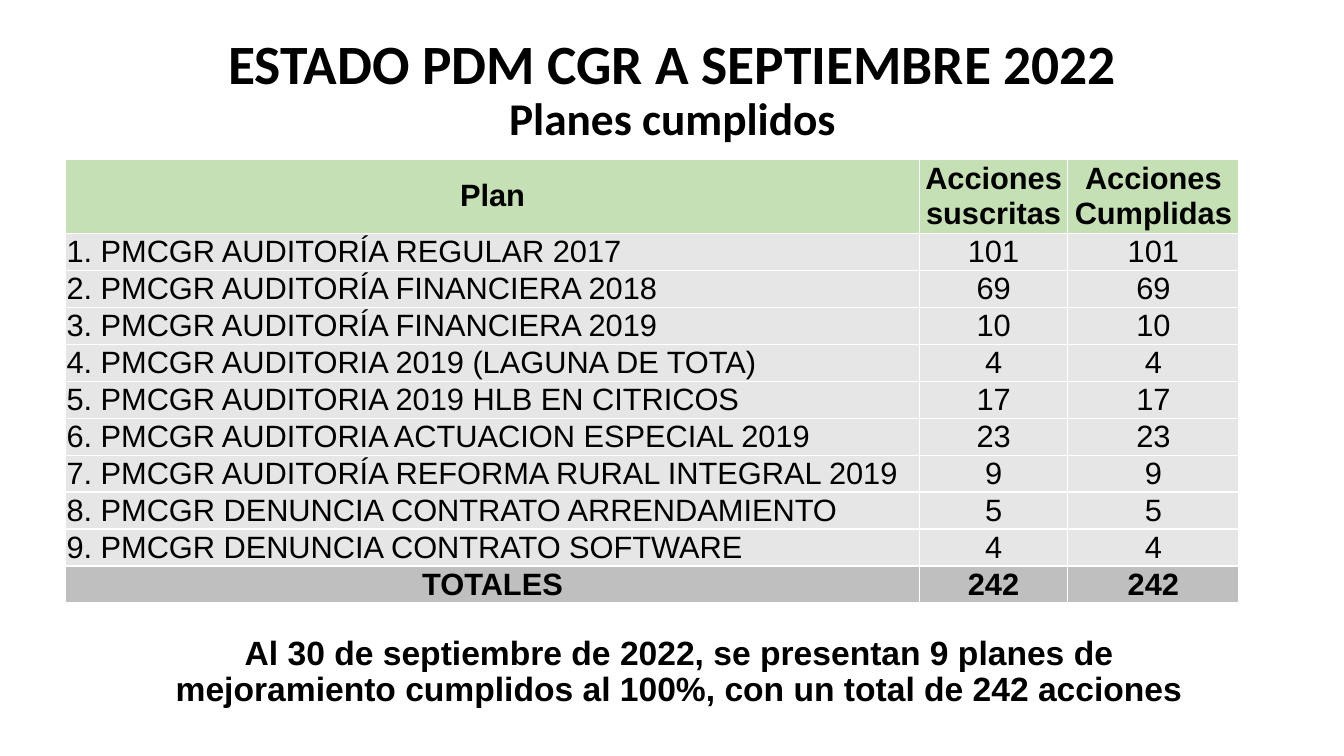
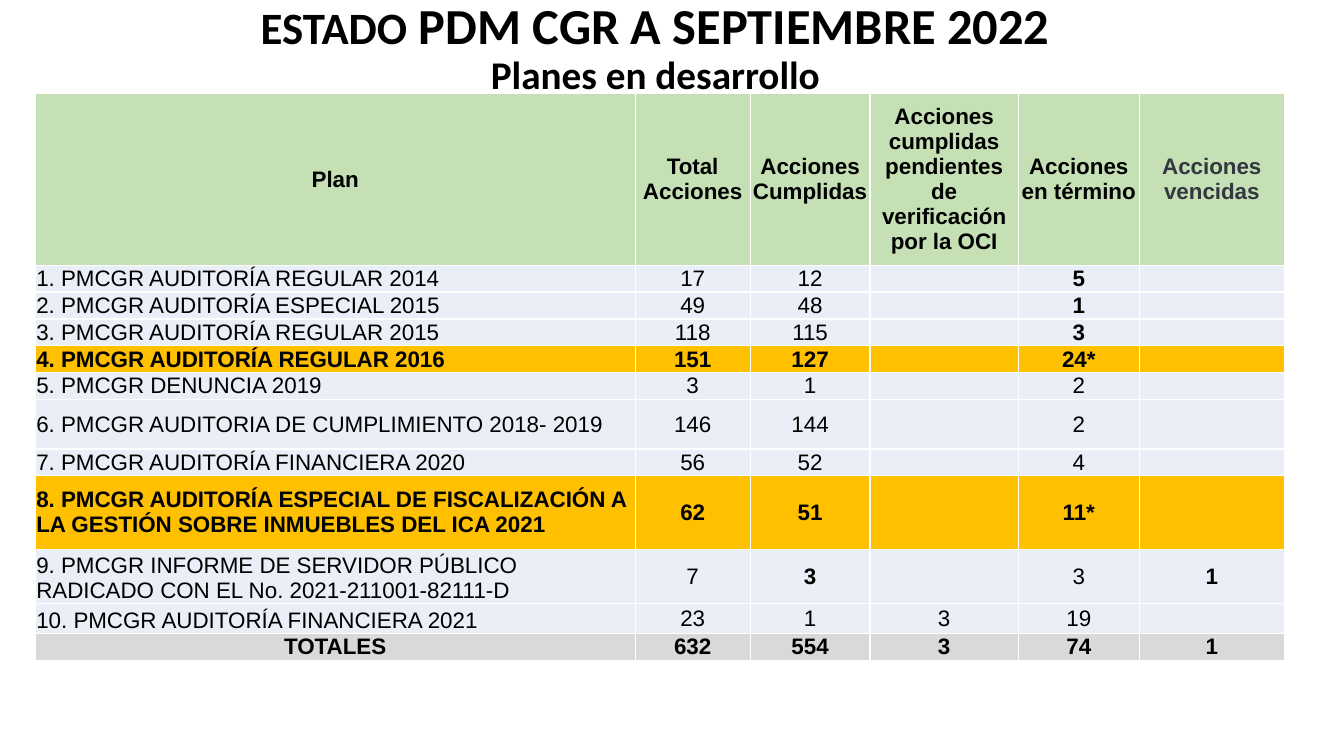
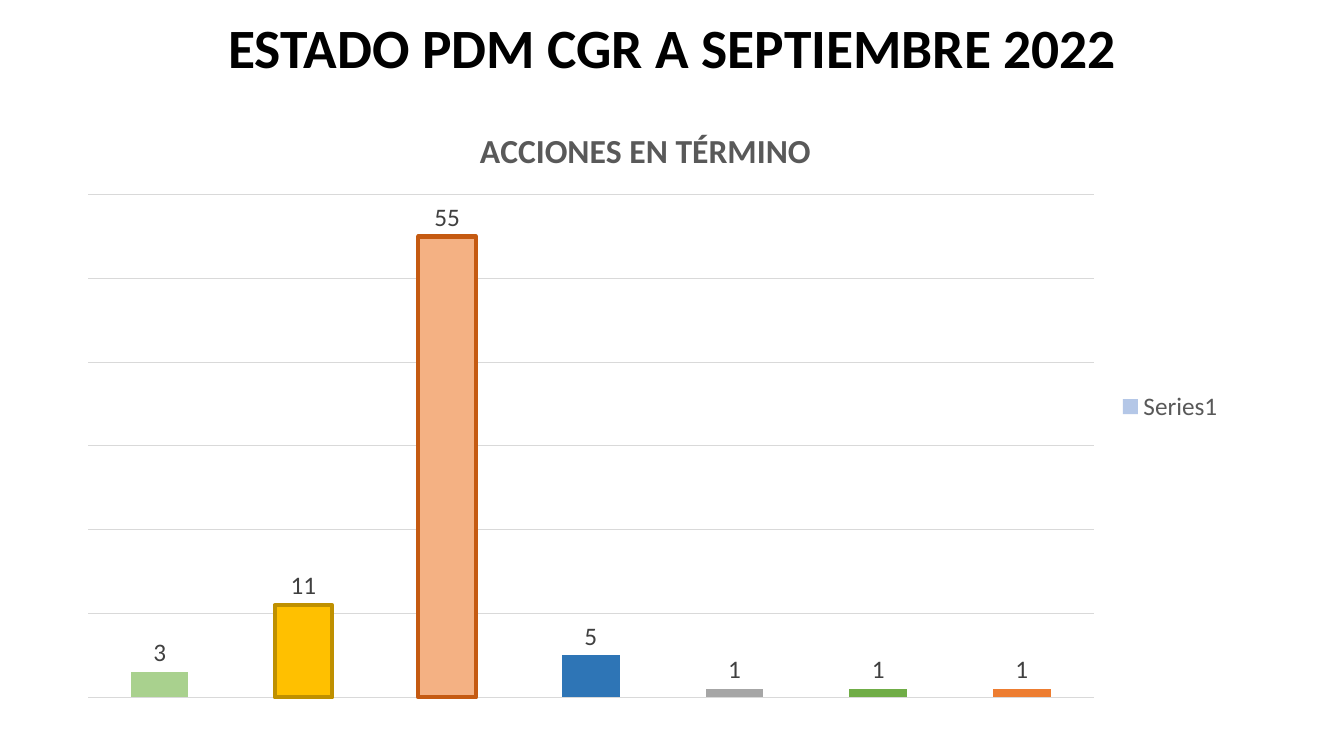
from dataclasses import dataclass

from lxml import etree
from pptx import Presentation
from pptx import util as u
from pptx.chart.data import CategoryChartData
from pptx.dml.color import RGBColor
from pptx.enum import chart as charts, text
from pptx.oxml import ns

Inches, Pt = u.Inches, u.Pt


@dataclass(frozen=True)
class Theme:
    title_font: str = "Calibri"
    body_font: str = "Arial"
    ink: str = "000000"
    muted_header: str = "333740"
    header: str = "C5E0B4"
    grey_row: str = "E7E6E6"
    blue_row: str = "EAEFF7"
    alert_row: str = "FFC000"
    dark_total: str = "BFBFBF"
    light_total: str = "D9D9D9"
    chart_text: str = "595959"
    label_text: str = "404040"
    gridline: str = "D9D9D9"
    series: str = "B4C7E7"
    bars: tuple = ("A9D18E", "FFC000", "F4B183", "2E75B6",
                   "A6A6A6", "70AD47", "ED7D31")
    title_size: float = 39.6
    subtitle_size: float = 32.4
    note_size: float = 24
    chart_title_size: float = 24
    chart_text_size: float = 18


THEME = Theme()
TITLE = "ESTADO PDM CGR A SEPTIEMBRE 2022"
LEFT, CENTER = text.PP_ALIGN.LEFT, text.PP_ALIGN.CENTER
MIDDLE, BOTTOM = text.MSO_ANCHOR.MIDDLE, text.MSO_ANCHOR.BOTTOM


@dataclass
class Row:
    """One table row; bold holds the numbers of the bold columns."""
    cells: tuple
    height: float
    fill: str
    bold: tuple = ()
    label_align: int = LEFT
    label_anchor: int = MIDDLE


def set_font(font, size, color=THEME.ink, name=THEME.body_font, bold=False):
    font.size, font.name, font.bold = Pt(size), name, bold
    font.color.rgb = RGBColor.from_string(color)


def write_text(frame, lines, align=CENTER, spacing=None, **font):
    """Write lines of (text, size) runs as one paragraph with line breaks."""
    frame.word_wrap = True
    paragraph = frame.paragraphs[0]
    paragraph.alignment = align
    if spacing:
        paragraph.line_spacing = spacing
    for number, line in enumerate(lines):
        if number:
            paragraph.add_line_break()
        for words, size in line:
            run = paragraph.add_run()
            run.text = words
            set_font(run.font, size, **font)


def add_heading(slide, box, lines, name=THEME.title_font):
    shape = slide.shapes.add_textbox(*map(Inches, box))
    shape.text_frame.vertical_anchor = MIDDLE
    write_text(shape.text_frame, lines, spacing=0.9, name=name, bold=True)


def fill_cell(cell, words, size, fill, align, anchor, **font):
    cell.margin_left = cell.margin_right = Inches(0.01)
    cell.margin_top = cell.margin_bottom = 0
    cell.vertical_anchor = anchor
    cell.fill.solid()
    cell.fill.fore_color.rgb = RGBColor.from_string(fill)
    if words:
        write_text(cell.text_frame, [[(words, size)]], align, **font)
    else:
        end = cell.text_frame.paragraphs[0]._p.get_or_add_endParaRPr()
        end.set("sz", str(size * 100))


def add_plan_table(slide, left, top, widths, rows, size, muted=()):
    """Draw the rows; muted holds (row, column) pairs in the softer ink.

    The white cell borders come from the default table style.
    """
    height = sum(row.height for row in rows)
    table = slide.shapes.add_table(
        len(rows), len(widths), Inches(left), Inches(top),
        Inches(sum(widths)), Inches(height)).table
    table.first_row = table.horz_banding = False
    for column, width in zip(table.columns, widths):
        column.width = Inches(width)
    for r, row in enumerate(rows):
        table.rows[r].height = Inches(row.height)
        for c, words in enumerate(row.cells):
            fill_cell(
                table.cell(r, c), words, size, row.fill,
                align=CENTER if c else row.label_align,
                anchor=MIDDLE if c else row.label_anchor,
                color=THEME.muted_header if (r, c) in muted else THEME.ink,
                bold=c in row.bold)


def set_layout(parent, position, **fractions):
    """Place a chart part by fractions of the chart's size."""
    for old in parent.findall(ns.qn("c:layout")):
        parent.remove(old)
    layout = etree.Element(ns.qn("c:layout"))
    manual = etree.SubElement(layout, ns.qn("c:manualLayout"))
    if "w" in fractions:
        etree.SubElement(manual, ns.qn("c:layoutTarget"), val="inner")
    for axis in "xy":
        etree.SubElement(manual, ns.qn(f"c:{axis}Mode"), val="edge")
    for key, value in fractions.items():
        etree.SubElement(manual, ns.qn(f"c:{key}"), val=str(value))
    parent.insert(position, layout)


def add_term_chart(slide, box, values, outlines):
    data = CategoryChartData()
    data.categories = [str(n + 1) for n in range(len(values))]
    data.add_series("Series1", values)
    chart = slide.shapes.add_chart(
        charts.XL_CHART_TYPE.COLUMN_CLUSTERED, *map(Inches, box), data).chart
    style = dict(name=THEME.title_font, color=THEME.chart_text)
    set_font(chart.font, 10, name=THEME.title_font)

    chart.has_title = True
    write_text(chart.chart_title.text_frame,
               [[("ACCIONES EN TÉRMINO", THEME.chart_title_size)]],
               bold=True, **style)
    set_layout(chart.chart_title._element, 1, x=0.35, y=0.03)
    set_layout(chart._chartSpace.chart.plotArea, 0,
               x=0.02, y=0.15, w=0.86, h=0.83)

    chart.has_legend = True
    chart.legend.position = charts.XL_LEGEND_POSITION.RIGHT
    chart.legend.include_in_layout = False
    set_font(chart.legend.font, THEME.chart_text_size, **style)

    chart.category_axis.visible = False
    axis = chart.value_axis
    axis.visible = False
    axis.minimum_scale, axis.maximum_scale, axis.major_unit = 0, 60, 10
    axis.has_major_gridlines = True
    grid = axis.major_gridlines.format.line
    grid.width = Pt(0.75)
    grid.color.rgb = RGBColor.from_string(THEME.gridline)

    plot = chart.plots[0]
    plot.gap_width = 150
    plot.vary_by_categories = False
    plot.has_data_labels = True
    labels = plot.data_labels
    labels.show_value = True
    labels.position = charts.XL_LABEL_POSITION.OUTSIDE_END
    set_font(labels.font, THEME.chart_text_size, THEME.label_text,
             THEME.title_font)

    series = plot.series[0]
    series.format.fill.solid()
    series.format.fill.fore_color.rgb = RGBColor.from_string(THEME.series)
    for index, color in enumerate(THEME.bars):
        bar = series.points[index].format
        bar.fill.solid()
        bar.fill.fore_color.rgb = RGBColor.from_string(color)
        if index in outlines:
            bar.line.width = Pt(3)
            bar.line.color.rgb = RGBColor.from_string(outlines[index])


def build_completed_plans(slide):
    add_heading(slide, (0.92, 0.4, 11.5, 1),
                [[(TITLE, THEME.title_size)],
                 [("Planes cumplidos", THEME.subtitle_size)]])
    plans = (
        ("1. PMCGR AUDITORÍA REGULAR 2017", 101),
        ("2. PMCGR AUDITORÍA FINANCIERA 2018", 69),
        ("3. PMCGR AUDITORÍA FINANCIERA 2019", 10),
        ("4. PMCGR AUDITORIA 2019 (LAGUNA DE TOTA)", 4),
        ("5. PMCGR AUDITORIA 2019 HLB EN CITRICOS", 17),
        ("6. PMCGR AUDITORIA ACTUACION ESPECIAL 2019", 23),
        ("7. PMCGR AUDITORÍA REFORMA RURAL INTEGRAL 2019", 9),
        ("8. PMCGR DENUNCIA CONTRATO ARRENDAMIENTO", 5),
        ("9. PMCGR DENUNCIA CONTRATO SOFTWARE", 4),
    )
    total = str(sum(count for _, count in plans))
    every = range(3)
    rows = [Row(("Plan", "Acciones suscritas", "Acciones Cumplidas"),
                0.56, THEME.header, every, CENTER)]
    rows += [Row((plan, str(count), str(count)), 0.35, THEME.grey_row)
             for plan, count in plans]
    rows.append(Row(("TOTALES", total, total), 0.35, THEME.dark_total,
                    every, CENTER))
    add_plan_table(slide, 0.65, 1.58, (8.47, 1.47, 1.7), rows, 22)
    add_heading(slide, (1.3, 6.24, 10.87, 0.86),
                [[("Al 30 de septiembre de 2022, se presentan 9 planes de "
                   "mejoramiento cumplidos al 100%, con un total de "
                   "242 acciones", THEME.note_size)]], THEME.body_font)


def build_plans_in_progress(slide):
    first, rest = TITLE.split(" ", 1)
    add_heading(slide, (0, 0.13, 13, 0.72),
                [[(first, 32), (" " + rest, 36)],
                 [("Planes en desarrollo", 28)]])
    every = range(6)
    normal, alert = THEME.blue_row, THEME.alert_row
    rows = [
        Row(("Plan", "Total Acciones", "Acciones Cumplidas",
             "Acciones cumplidas pendientes de verificación por la OCI",
             "Acciones en término", "Acciones vencidas"),
            1.7, THEME.header, every, CENTER),
        Row(("1. PMCGR AUDITORÍA REGULAR 2014", "17", "12", "", "5", ""),
            0.25, normal, (4,)),
        Row(("2. PMCGR AUDITORÍA ESPECIAL 2015", "49", "48", "", "1", ""),
            0.25, normal, (4,)),
        Row(("3. PMCGR AUDITORÍA REGULAR 2015", "118", "115", "", "3", ""),
            0.25, normal, (4,)),
        Row(("4. PMCGR AUDITORÍA REGULAR 2016", "151", "127", "", "24*", ""),
            0.25, alert, every),
        Row(("5. PMCGR DENUNCIA 2019", "3", "1", "", "2", ""), 0.25, normal),
        Row(("6. PMCGR AUDITORIA DE CUMPLIMIENTO 2018- 2019",
             "146", "144", "", "2", ""), 0.49, normal),
        Row(("7. PMCGR AUDITORÍA FINANCIERA 2020", "56", "52", "", "4", ""),
            0.25, normal),
        Row(("8. PMCGR AUDITORÍA ESPECIAL DE FISCALIZACIÓN A LA GESTIÓN "
             "SOBRE INMUEBLES DEL ICA 2021", "62", "51", "", "11*", ""),
            0.73, alert, every),
        Row(("9. PMCGR INFORME DE SERVIDOR PÚBLICO RADICADO CON EL "
             "No. 2021-211001-82111-D", "7", "3", "", "3", "1"),
            0.49, normal, (2, 5), label_anchor=BOTTOM),
        Row(("10. PMCGR AUDITORÍA FINANCIERA 2021", "23", "1", "3", "19", ""),
            0.3, normal, label_anchor=BOTTOM),
        Row(("TOTALES", "632", "554", "3", "74", "1"),
            0.25, THEME.light_total, every, CENTER),
    ]
    add_plan_table(slide, 0.35, 0.93, (5.95, 1.14, 1.19, 1.47, 1.2, 1.44),
                   rows, 16, muted={(0, 5)})


def build_actions_in_term(slide):
    add_heading(slide, (0.92, 0.14, 11.5, 0.73),
                [[(TITLE, THEME.title_size)]])
    add_term_chart(slide, (0.64, 1.03, 11.6, 6.01), (3, 11, 55, 5, 1, 1, 1),
                   outlines={1: "BF9000", 2: "C55A11"})


def main():
    presentation = Presentation()
    presentation.slide_width = Inches(13.33)
    presentation.slide_height = Inches(7.5)
    blank = presentation.slide_layouts[6]
    for build in (build_completed_plans, build_plans_in_progress,
                  build_actions_in_term):
        build(presentation.slides.add_slide(blank))
    presentation.save("out.pptx")


if __name__ == "__main__":
    main()
